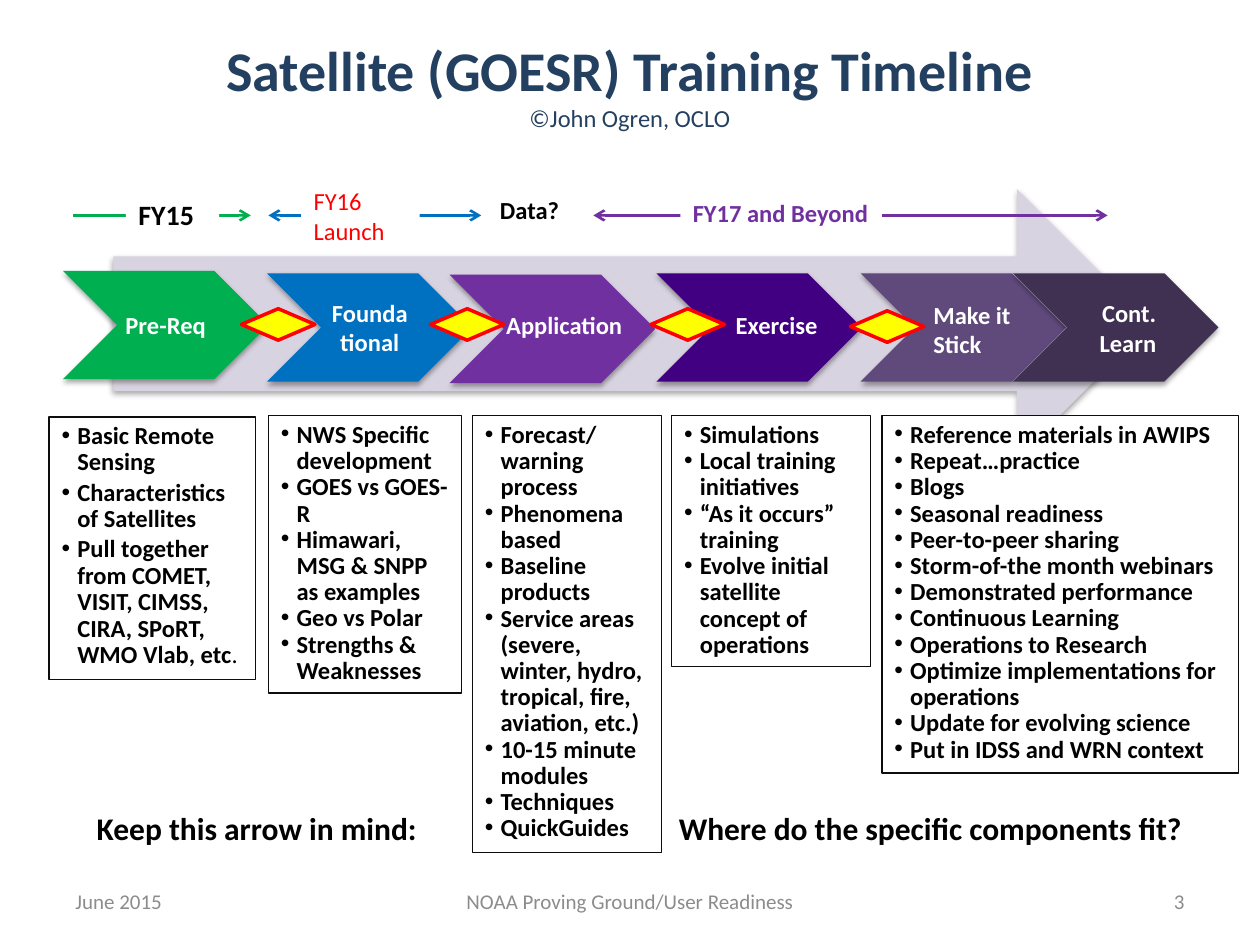
from lxml.etree import SubElement
from pptx import Presentation
from pptx.dml.color import RGBColor
from pptx.enum.shapes import MSO_CONNECTOR, MSO_SHAPE
from pptx.enum.text import MSO_ANCHOR, PP_ALIGN
from pptx.oxml.ns import qn
from pptx.util import Pt

NAVY = RGBColor(0x24, 0x40, 0x61)
BLACK = RGBColor(0, 0, 0)
WHITE = RGBColor(0xFF, 0xFF, 0xFF)
RED = RGBColor(0xFF, 0, 0)
YELLOW = RGBColor(0xFF, 0xFF, 0)
GREEN = RGBColor(0, 0xB0, 0x50)
BLUE = RGBColor(0, 0x70, 0xC0)
PURPLE = RGBColor(0x70, 0x30, 0xA0)
INDIGO = RGBColor(0x41, 0, 0x82)
PLUM = RGBColor(0x60, 0x4A, 0x7B)
DARK_PLUM = RGBColor(0x40, 0x31, 0x52)
LAVENDER = RGBColor(0xD8, 0xD3, 0xE0)
BORDER = RGBColor(0x0D, 0x0D, 0x0D)
GREY = RGBColor(0x8C, 0x8C, 0x8C)

# Content; all places are in points: left, top, width, height
TITLE = [("Satellite (GOESR) Training Timeline", 32, True), ("©John Ogren, OCLO", 14, False)]
CHEVRONS = [(36, 154.8, GREEN), (152.6, 156.2, BLUE), (257, 157, PURPLE),
            (375.1, 156.2, INDIGO), (491.8, 156.2, PLUM), (578.9, 156.2, DARK_PLUM)]
CHEVRON_SIZE = (117.4, 61.9)
DIAMONDS = [(486, 177.6), (372, 176.4), (246, 176.4), (138, 176.4)]
DIAMOND_SIZE = (42, 18)
CENTRED = {"alignment": PP_ALIGN.CENTER, "anchor": MSO_ANCHOR.MIDDLE, "inset": (4.4, 4.4)}
CHEVRON_LABELS = [
    ("Pre-Req", (67, 154.8, 55.4, 61.9), CENTRED),
    ("Foundational", (183.6, 156.2, 55.4, 61.9), CENTRED),
    ("Cont.\nLearn", (609.8, 156.2, 55.4, 61.9),
     {"alignment": PP_ALIGN.RIGHT, "inset": (4.4, 14.4)}),
]
OVERLAID_LABELS = [
    ("Application", (282.2, 173.5, 91.4, 24.5), {"wrap": False}),
    ("Exercise", (413.3, 173.5, 72.7, 24.5), {}),
    ("Make it\nStick", (526.3, 167.8, 67.7, 41), {}),
]
# Left, right, colour, arrowhead at the left end
SPANS = [(41.8, 143.3, GREEN, False), (339.1, 632.9, PURPLE, True), (153.4, 275, BLUE, True)]
SPAN_TOP = 123.1
SPAN_LABELS = [
    ("FY15", (72, 109.4, 53.3, 26.6),
     {"size": 16, "color": BLACK, "fill": WHITE, "wrap": False}),
    ("FY17 and Beyond", (388.8, 109.4, 115.2, 24.5),
     {"color": PURPLE, "fill": WHITE, "wrap": False}),
    ("FY16\nLaunch", (172.1, 103, 67.7, 41), {"color": RED, "bold": False, "fill": WHITE}),
    ("Data?", (278.6, 108, 57.6, 24.5), {"color": BLACK}),
]
LISTS = [
    ((28.1, 238.3, 118.1, 149.8), None, 0.9, 2.1,
     ["Basic Remote Sensing", "Characteristics of Satellites",
      "Pull together from COMET, VISIT, CIMSS, CIRA, SPoRT, WMO Vlab, etc"]),
    ((153.4, 237.6, 110.2, 158.4), None, Pt(15), 0,
     ["NWS Specific development", "GOES vs GOES-R", "Himawari, MSG & SNPP as examples",
      "Geo vs Polar", "Strengths & Weaknesses"]),
    ((270, 237.6, 108, 249.6), None, Pt(15), 0,
     ["Forecast/ warning process", "Phenomena based", "Baseline products",
      "Service areas (severe, winter, hydro, tropical, fire, aviation, etc.)",
      "10-15 minute modules", "Techniques", "QuickGuides"]),
    ((383.8, 237.6, 113.8, 143.3), None, Pt(15), 0,
     ["Simulations", "Local training initiatives", "“As it occurs” training",
      "Evolve initial satellite concept of operations"]),
    ((504, 237.6, 203.8, 204.2), WHITE, Pt(15), 0,
     ["Reference materials in AWIPS", "Repeat…practice", "Blogs", "Seasonal readiness",
      "Peer-to-peer sharing", "Storm-of-the month webinars", "Demonstrated performance",
      "Continuous Learning", "Operations to Research",
      "Optimize implementations for operations", "Update for evolving science",
      "Put in IDSS and WRN context"]),
]
QUESTION = "Keep this arrow in mind:\tWhere do the specific components fit?"
FOOTERS = [("June 2015", 36, 168, PP_ALIGN.LEFT),
           ("NOAA Proving Ground/User Readiness", 246, 228, PP_ALIGN.CENTER),
           ("3", 516, 168, PP_ALIGN.RIGHT)]


def add_run(paragraph, text, size=14, color=BLACK, bold=True):
    run = paragraph.add_run()
    run.text = text
    formats = {"name": "Calibri", "size": Pt(size), "bold": bold}
    for name, value in formats.items():
        setattr(run.font, name, value)
    run.font.color.rgb = color


def add_figure(shapes, kind, box, fill=None, line=None, line_width=0.75, shadow=False):
    shape = shapes.add_shape(kind, *map(Pt, box))
    shape.shadow.inherit = False
    if fill is None:
        shape.fill.background()
    else:
        shape.fill.solid()
        shape.fill.fore_color.rgb = fill
    if line is None:
        shape.line.fill.background()
    else:
        shape.line.color.rgb = line
        shape.line.width = Pt(line_width)
    if shadow:
        effects = shape.element.spPr.find(qn("a:effectLst"))
        outer = SubElement(effects, qn("a:outerShdw"), blurRad=str(Pt(3.1)), dist=str(Pt(1.8)),
                           dir="5400000", rotWithShape="0")
        color = SubElement(outer, qn("a:srgbClr"), val="000000")
        SubElement(color, qn("a:alpha"), val="35000")
    return shape


def set_frame(shape, wrap=True, anchor=MSO_ANCHOR.TOP, inset=(7.2, 3.6)):
    side, top = inset
    formats = {"word_wrap": wrap, "vertical_anchor": anchor, "margin_left": Pt(side),
               "margin_right": Pt(side), "margin_top": Pt(top), "margin_bottom": Pt(min(inset))}
    for name, value in formats.items():
        setattr(shape.text_frame, name, value)
    return shape.text_frame


def add_label(shapes, text, box, size=14, color=WHITE, bold=True, fill=None,
              alignment=PP_ALIGN.LEFT, **frame_formats):
    if fill is None:
        shape = shapes.add_textbox(*map(Pt, box))
    else:
        shape = add_figure(shapes, MSO_SHAPE.RECTANGLE, box, fill)
    frame = set_frame(shape, **frame_formats)
    for index, line in enumerate(text.split("\n")):
        paragraph = frame.add_paragraph() if index else frame.paragraphs[0]
        paragraph.alignment = alignment
        add_run(paragraph, line, size, color, bold)
    return frame


def add_list(shapes, box, fill, line_spacing, space_after, items):
    frame = set_frame(add_figure(shapes, MSO_SHAPE.RECTANGLE, box, fill, BORDER))
    for index, item in enumerate(items):
        paragraph = frame.add_paragraph() if index else frame.paragraphs[0]
        properties = paragraph._p.get_or_add_pPr()
        properties.set("marL", str(Pt(9)))
        properties.set("indent", str(Pt(-9)))
        SubElement(properties, qn("a:buFont"), typeface="Arial")
        SubElement(properties, qn("a:buChar"), char="•")
        formats = {"alignment": PP_ALIGN.LEFT, "line_spacing": line_spacing,
                   "space_after": Pt(space_after)}
        for name, value in formats.items():
            setattr(paragraph, name, value)
        add_run(paragraph, item)
    return frame


def add_span(shapes, left, right, color, both_ends):
    line = shapes.add_connector(MSO_CONNECTOR.STRAIGHT, Pt(left), Pt(SPAN_TOP),
                                Pt(right), Pt(SPAN_TOP))
    line.line.color.rgb = color
    line.line.width = Pt(1.5)
    outline = line.line._get_or_add_ln()
    for end in ["headEnd", "tailEnd"] if both_ends else ["tailEnd"]:
        SubElement(outline, qn("a:" + end), type="arrow")
    SubElement(line.element.spPr, qn("a:effectLst"))


presentation = Presentation()
presentation.slide_width, presentation.slide_height = Pt(720), Pt(540)
slide = presentation.slides.add_slide(presentation.slide_layouts[5])
shapes = slide.shapes

# Title
title = shapes.title
title.left, title.top, title.width, title.height = map(Pt, (54, 5.8, 612, 84.2))
heading = set_frame(title, anchor=MSO_ANCHOR.MIDDLE, inset=(7.2, 7.2)).paragraphs[0]
heading.alignment = PP_ALIGN.CENTER
for index, (text, size, bold) in enumerate(TITLE):
    if index:
        heading.add_line_break()
    add_run(heading, text, size, NAVY, bold)

# Big arrow with its chevrons
process = shapes.add_group_shape().shapes
add_figure(process, MSO_SHAPE.RIGHT_ARROW, (64.8, 108, 593.3, 154.1), LAVENDER, shadow=True)
for left, top, color in CHEVRONS:
    add_figure(process, MSO_SHAPE.CHEVRON, (left, top, *CHEVRON_SIZE), color, shadow=True)
for text, box, formats in CHEVRON_LABELS:
    add_label(process, text, box, **formats)

# Milestones between the chevrons
for position in DIAMONDS:
    add_figure(shapes, MSO_SHAPE.FLOWCHART_DECISION, (*position, *DIAMOND_SIZE), YELLOW, RED, 2)

# Fiscal years and labels over the chevrons
for span in SPANS:
    add_span(shapes, *span)
for text, box, formats in SPAN_LABELS + OVERLAID_LABELS:
    add_label(shapes, text, box, **formats)

# Lists under the chevrons
frames = [add_list(shapes, *entry) for entry in LISTS]
add_run(frames[0].paragraphs[-1], ".", bold=False)

# Closing question, its second half set on a tab stop
question = add_label(shapes, QUESTION, (48.2, 458.6, 642.2, 28.8), size=18, color=BLACK)
tabs = SubElement(question.paragraphs[0]._p.get_or_add_pPr(), qn("a:tabLst"))
SubElement(tabs, qn("a:tab"), pos=str(Pt(332.6)), algn="l")

# Footer
for text, left, width, alignment in FOOTERS:
    add_label(shapes, text, (left, 500.4, width, 28.8), size=12, color=GREY, bold=False,
              alignment=alignment, anchor=MSO_ANCHOR.MIDDLE)

presentation.save("out.pptx")
